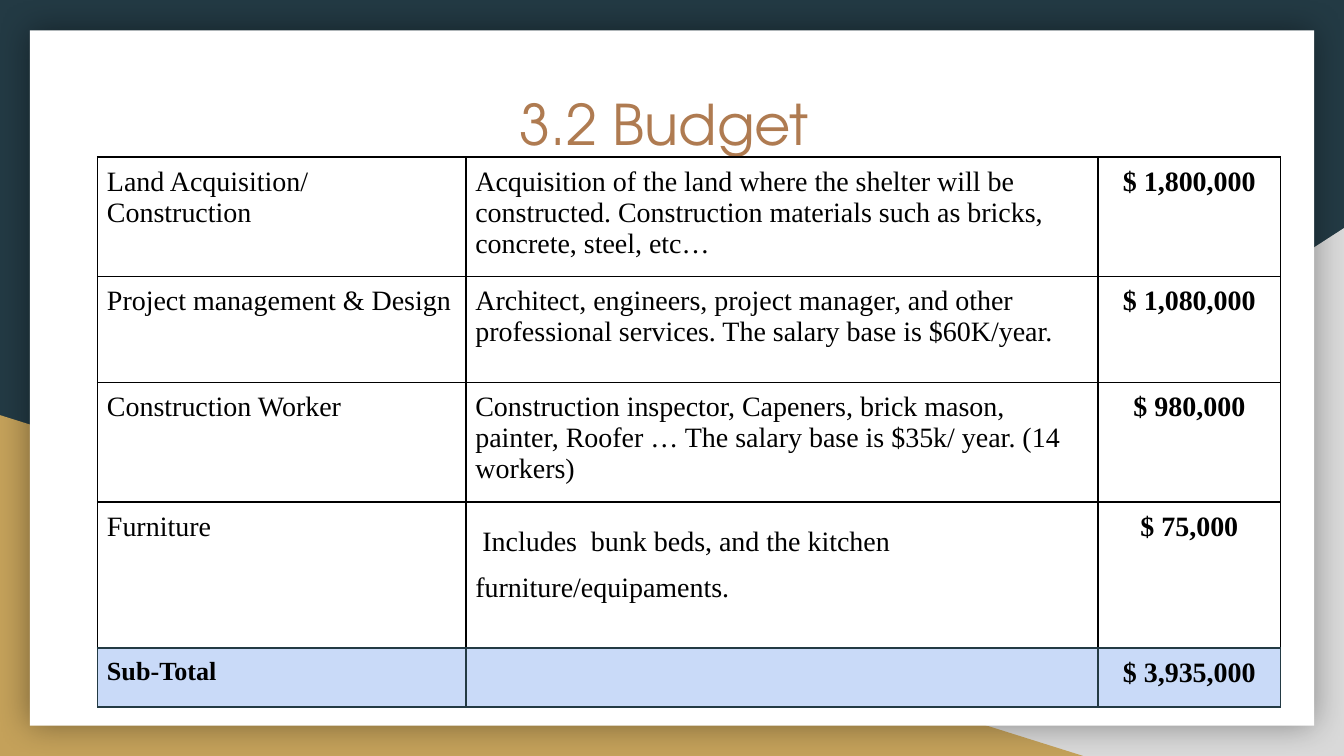
"""Builds the budget slide: layered backdrop, title and cost table."""
import pptx
import pptx.dml.color
import pptx.enum.shapes
import pptx.enum.text
import pptx.oxml
import pptx.oxml.ns
import pptx.util

Pt = pptx.util.Pt
SHAPE = pptx.enum.shapes.MSO_SHAPE
ALIGN = pptx.enum.text.PP_ALIGN
COLORS = {"navy": "233A44", "gray": "D9D9D9", "gold": "C4A15A", "white": "FFFFFF",
          "bronze": "AF7B51", "black": "000000", "total": "C9DAF8"}

TITLE = "3.2 Budget "
BACKDROP = [
    (SHAPE.RIGHT_TRIANGLE, (282.24, 122.2, 437.76, 282.8), "gray"),
    (SHAPE.RIGHT_TRIANGLE, (0, 222.4, 580.3, 182.6), "gold"),
    (SHAPE.RECTANGLE, (16, 16.2, 688, 372.5), "white"),
]
ROWS = [
    ("Land Acquisition/ Construction",
     "Acquisition of the land where the shelter will be constructed. "
     "Construction materials such as bricks, concrete, steel, etc…", "$ 1,800,000"),
    ("Project management & Design",
     "Architect, engineers, project manager, and other professional services. "
     "The salary base is $60K/year.", "$ 1,080,000"),
    ("Construction Worker",
     "Construction inspector, Capeners, brick mason, painter, Roofer … "
     "The salary base is $35k/ year. (14 workers)", "$ 980,000"),
    ("Furniture", " Includes  bunk beds, and the kitchen furniture/equipaments.", "$ 75,000"),
    ("Sub-Total", "", "$ 3,935,000"),
]
COL_WIDTHS = [197.4, 338.6, 97.8]
ROW_HEIGHTS = [54, 56.7, 54, 78.4, 26.8]
TABLE_LEFT, TABLE_TOP = 52.3, 84.2
FURNITURE, TOTAL = 3, 4
TABLE_FONT = {"name": "Times New Roman", "size": Pt(15)}
TITLE_FONT = {"name": "TeX Gyre Adventor", "size": Pt(30)}
TITLE_SPACING = {"alignment": ALIGN.CENTER, "line_spacing": 1.5, "space_after": Pt(12)}
NS = pptx.oxml.ns.nsdecls("a")


def rgb(name):
    return pptx.dml.color.RGBColor.from_string(COLORS[name])


def apply(target, values):
    for key, value in values.items():
        setattr(target, key, value)


def write(p, text, font, color):
    r = p.add_run()
    r.text = text
    apply(r.font, font)
    r.font.color.rgb = rgb(color)


def add_backdrop(slide):
    for kind, box, color in BACKDROP:
        sp = slide.shapes.add_shape(kind, *map(Pt, box))
        sp.shadow.inherit = False
        sp.fill.solid()
        sp.fill.fore_color.rgb = rgb(color)
        sp.line.fill.background()
        if color == "gray":
            sp._element.spPr.xfrm.set("flipH", "1")
        if color == "white":
            effects = sp._element.spPr.find(pptx.oxml.ns.qn("a:effectLst"))
            effects.append(pptx.oxml.parse_xml(
                f'<a:outerShdw {NS} blurRad="{Pt(18)}" dist="0" dir="0" algn="ctr" rotWithShape="0">'
                f'<a:srgbClr val="{COLORS["black"]}"><a:alpha val="40000"/></a:srgbClr></a:outerShdw>'))


def add_title(slide):
    tf = slide.shapes.add_textbox(Pt(24.5), Pt(23), Pt(671), Pt(49)).text_frame
    margins = ("margin_left", "margin_top", "margin_right", "margin_bottom")
    apply(tf, {"word_wrap": True, **dict.fromkeys(margins, Pt(7.2))})
    p = tf.paragraphs[0]
    apply(p, TITLE_SPACING)
    write(p, TITLE, TITLE_FONT, "bronze")


def set_borders(cell, row):
    for side in "LRTB":
        navy = row == TOTAL or (row == FURNITURE and side == "B")
        color = COLORS["navy" if navy else "black"]
        cell._tc.get_or_add_tcPr().append(pptx.oxml.parse_xml(
            f'<a:ln{side} {NS} w="{Pt(1)}"><a:solidFill><a:srgbClr val="{color}"/></a:solidFill></a:ln{side}>'))


def add_budget(slide):
    frame = slide.shapes.add_table(len(ROWS), len(COL_WIDTHS), Pt(TABLE_LEFT), Pt(TABLE_TOP),
                                   Pt(sum(COL_WIDTHS)), Pt(sum(ROW_HEIGHTS)))
    table = frame.table
    apply(table, {"first_row": False, "horz_banding": False})
    for column, width in zip(table.columns, COL_WIDTHS):
        column.width = Pt(width)
    for row, height in zip(table.rows, ROW_HEIGHTS):
        row.height = Pt(height)
    margins = dict.fromkeys(("margin_left", "margin_top", "margin_right", "margin_bottom"), Pt(5))
    for i, texts in enumerate(ROWS):
        for j, text in enumerate(texts):
            cell = table.cell(i, j)
            apply(cell, margins)
            set_borders(cell, i)
            if i == TOTAL:
                cell.fill.solid()
                cell.fill.fore_color.rgb = rgb("total")
            else:
                cell.fill.background()
            p = cell.text_frame.paragraphs[0]
            if j == 2:
                p.alignment = ALIGN.CENTER
            if (i, j) == (FURNITURE, 1):
                apply(p, {"line_spacing": 1.5, "space_after": Pt(12)})
            size = Pt(14) if (i, j) == (TOTAL, 0) else Pt(15)
            write(p, text, {**TABLE_FONT, "size": size, "bold": j == 2 or i == TOTAL}, "black")


def main():
    prs = pptx.Presentation()
    apply(prs, {"slide_width": Pt(720), "slide_height": Pt(405)})
    slide = prs.slides.add_slide(prs.slide_layouts[6])
    slide.background.fill.solid()
    slide.background.fill.fore_color.rgb = rgb("navy")
    add_backdrop(slide)
    add_title(slide)
    add_budget(slide)
    prs.save("out.pptx")


if __name__ == "__main__":
    main()
